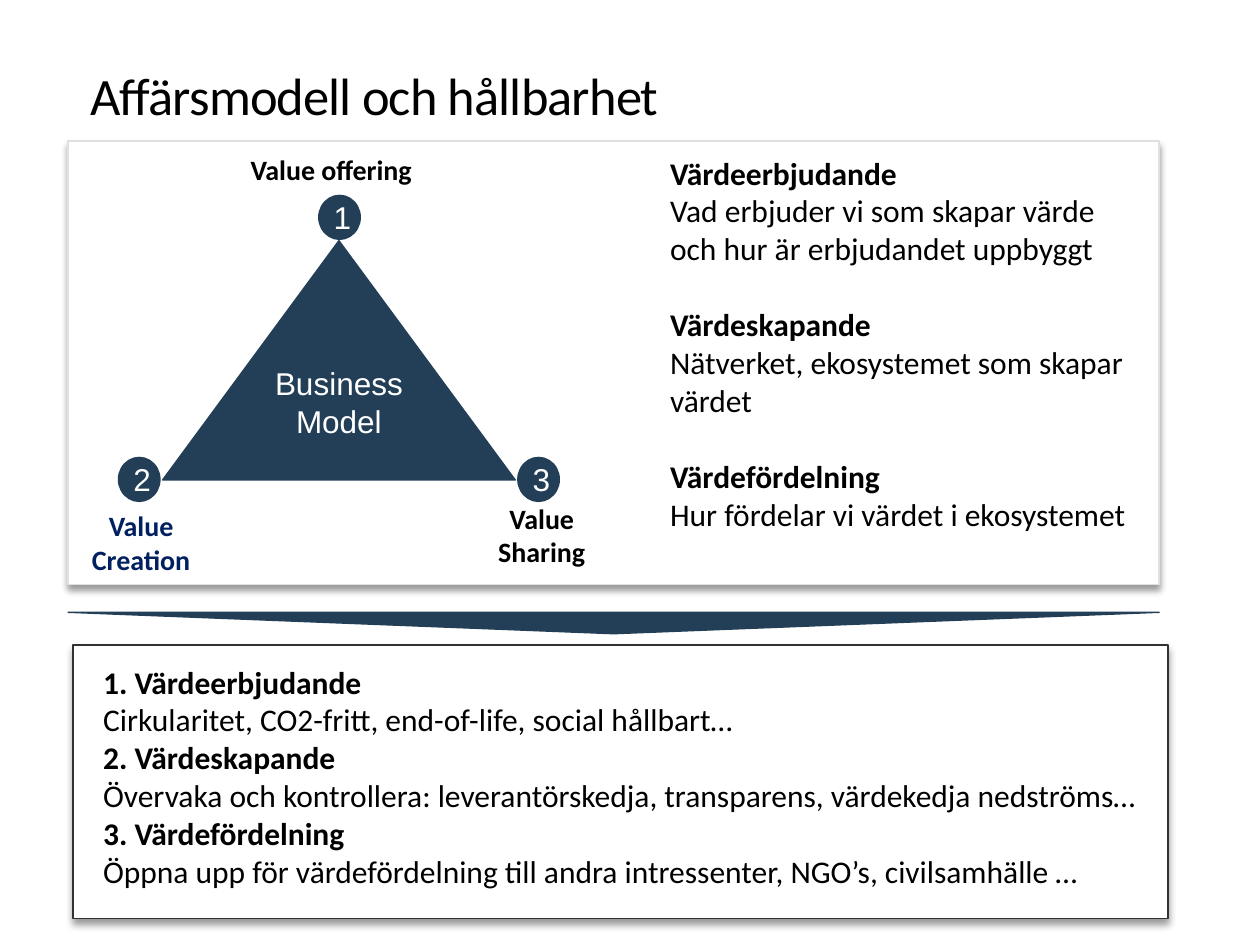
from dataclasses import dataclass
from typing import Optional

from lxml import etree
from pptx import Presentation
from pptx.dml.color import RGBColor
from pptx.enum import shapes, text
from pptx.oxml import ns
from pptx.util import Inches, Pt

COLORS = {
    "navy": "233E57",
    "creation": "002060",
    "black": "000000",
    "white": "FFFFFF",
    "panel_edge": "E0E0E0",
    "result_edge": "323232",
}


@dataclass
class Box:
    """A place on the slide, in inches."""
    left: float
    top: float
    width: float
    height: float

    def lengths(self) -> list:
        """Return left, top, width and height as lengths."""
        return [Inches(v) for v in (self.left, self.top, self.width, self.height)]


@dataclass
class Line:
    """One paragraph of text and its format."""
    wording: str
    size: float = 18
    bold: bool = False
    color: str = "black"
    font: str = "Calibri"
    align: Optional[text.PP_ALIGN] = None
    before: float = 0


@dataclass
class Corner:
    """A numbered corner of the triangle with its label."""
    number: str
    left: float
    top: float
    label: Line
    label_box: Box


def rgb(name: str) -> RGBColor:
    """Look up a colour by name."""
    return RGBColor.from_string(COLORS[name])


def write(frame, lines: list) -> None:
    """Fill a text frame with formatted paragraphs."""
    frame.word_wrap = True
    for index, line in enumerate(lines):
        paragraph = frame.add_paragraph() if index else frame.paragraphs[0]
        paragraph.text = line.wording
        paragraph.alignment = line.align
        paragraph.space_before = Pt(line.before)
        font = paragraph.runs[0].font
        font.name, font.size, font.bold = line.font, Pt(line.size), line.bold
        font.color.rgb = rgb(line.color)


def add_text(slide, box: Box, lines: list):
    """Add a text box and return its frame."""
    frame = slide.shapes.add_textbox(*box.lengths()).text_frame
    write(frame, lines)
    return frame


def add_solid(slide, kind, box: Box, fill: str = "navy", edge: str = "navy"):
    """Add a filled, outlined preset shape."""
    solid = slide.shapes.add_shape(kind, *box.lengths())
    solid.shadow.inherit = False
    solid.fill.solid()
    solid.fill.fore_color.rgb = rgb(fill)
    solid.line.color.rgb = rgb(edge)
    solid.line.width = Pt(0.75)
    return solid


def add_panel(slide, box: Box, edge: str) -> None:
    """Add a white panel with a soft shadow below it."""
    panel = add_solid(slide, shapes.MSO_SHAPE.RECTANGLE, box, "white", edge)
    effects = panel._element.spPr.find(ns.qn("a:effectLst"))
    shadow = etree.SubElement(effects, ns.qn("a:outerShdw"), blurRad=str(Pt(4)),
                              dist=str(Pt(3)), dir="5400000", rotWithShape="0")
    tint = etree.SubElement(shadow, ns.qn("a:srgbClr"), val=COLORS["black"])
    etree.SubElement(tint, ns.qn("a:alpha"), val="40000")


def add_caption(solid, wording: str, bottom: float = 0.04) -> None:
    """Write centred white text inside a shape."""
    frame = solid.text_frame
    frame.margin_left = frame.margin_right = Inches(0.07)
    frame.margin_top, frame.margin_bottom = Inches(0.04), Inches(bottom)
    frame.vertical_anchor = text.MSO_ANCHOR.MIDDLE
    write(frame, [Line(wording, color="white", font="Arial", align=text.PP_ALIGN.CENTER)])


def add_corner(slide, corner: Corner) -> None:
    """Add a numbered circle and its label."""
    add_text(slide, corner.label_box, [corner.label])
    circle = add_solid(slide, shapes.MSO_SHAPE.OVAL, Box(corner.left, corner.top, 0.33, 0.35))
    add_caption(circle, corner.number)


def sections(pairs: list, gap: float = 0) -> list:
    """Turn heading and body pairs into paragraphs."""
    lines = []
    for heading, body in pairs:
        lines += [Line(heading, bold=True, before=gap if lines else 0), Line(body)]
    return lines


CENTER = text.PP_ALIGN.CENTER
CORNERS = [
    Corner("1", 2.53, 1.55, Line("Value offering", 16, True), Box(1.89, 1.16, 1.63, 0.37)),
    Corner("2", 0.94, 3.63, Line("Value Creation", 16, True, "creation", align=CENTER),
           Box(0.5, 3.99, 1.24, 0.64)),
    Corner("3", 4.11, 3.63, Line("Value Sharing", 16, True, align=CENTER),
           Box(3.68, 3.93, 1.24, 0.64)),
]
DEFINITIONS = [
    ("Värdeerbjudande", "Vad erbjuder vi som skapar värde och hur är erbjudandet uppbyggt"),
    ("Värdeskapande", "Nätverket, ekosystemet som skapar värdet"),
    ("Värdefördelning", "Hur fördelar vi värdet i ekosystemet"),
]
EXAMPLES = [
    ("1. Värdeerbjudande", "Cirkularitet, CO2-fritt, end-of-life, social hållbart…"),
    ("2. Värdeskapande",
     "Övervaka och kontrollera: leverantörskedja, transparens, värdekedja nedströms…"),
    ("3. Värdefördelning",
     "Öppna upp för värdefördelning till andra intressenter, NGO’s, civilsamhälle …"),
]


def main() -> None:
    """Build and save the slide."""
    deck = Presentation()
    deck.slide_width, deck.slide_height = Inches(10), Inches(7.5)
    slide = deck.slides.add_slide(deck.slide_layouts[6])

    add_panel(slide, Box(0.58, 5.12, 8.69, 2.17), "result_edge")
    add_panel(slide, Box(0.54, 1.12, 8.66, 3.52), "panel_edge")

    title = add_text(slide, Box(0.62, 0.53, 6.48, 0.41),
                     [Line("Affärsmodell och hållbarhet", 30)]).paragraphs[0]
    title.line_spacing = 0.85
    title.runs[0].font._element.set("spc", "-50")

    add_text(slide, Box(5.22, 1.17, 3.86, 3.13), sections(DEFINITIONS, gap=22))

    model = add_solid(slide, shapes.MSO_SHAPE.ISOSCELES_TRIANGLE, Box(1.29, 1.91, 2.8, 1.9))
    add_caption(model, "Business Model", bottom=0.33)
    for corner in CORNERS:
        add_corner(slide, corner)

    pointer = add_solid(slide, shapes.MSO_SHAPE.ISOSCELES_TRIANGLE, Box(0.54, 4.86, 8.66, 0.17))
    pointer.rotation = 180
    add_text(slide, Box(0.72, 5.21, 8.66, 1.92), sections(EXAMPLES))

    deck.save("out.pptx")


if __name__ == "__main__":
    main()
